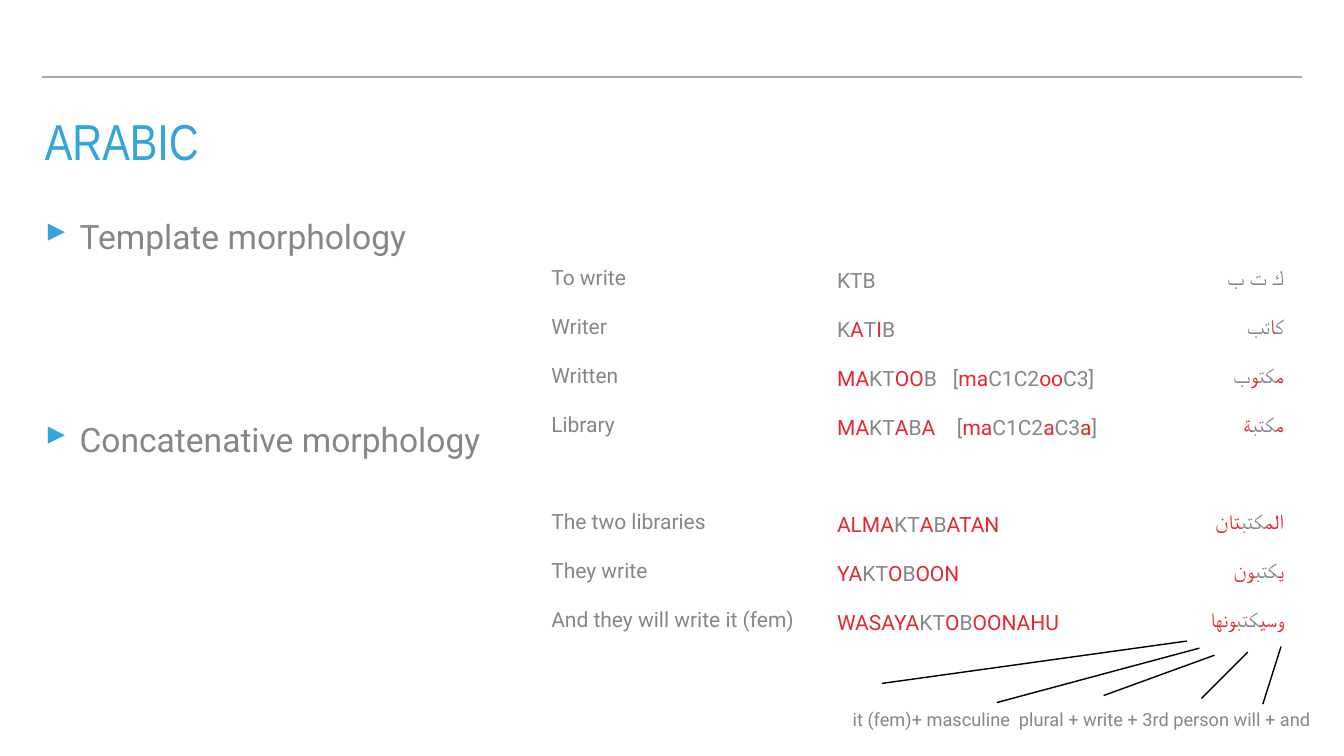
"""Build the slide on Arabic template and concatenative morphology."""
from dataclasses import dataclass

from lxml.etree import SubElement
from pptx import Presentation
from pptx.dml.color import RGBColor as RGB
from pptx.enum.shapes import MSO_CONNECTOR as CONN
from pptx.enum.text import MSO_ANCHOR as ANCHOR, PP_ALIGN as ALIGN
from pptx.oxml.ns import qn
from pptx.util import Inches, Pt


@dataclass(frozen=True)
class Theme:
    blue: str = "34A5DA"
    grey: str = "838787"
    red: str = "E42832"
    rule: str = "A6AAA9"
    black: str = "000000"
    heading: str = "Arial Narrow"
    body: str = "Roboto"
    title_size: float = 72.2
    bullet_size: float = 48
    word_size: float = 30
    gloss_size: float = 26


theme = Theme()
prs = Presentation()
prs.slide_width, prs.slide_height = Inches(26.67), Inches(15)
s = prs.slides.add_slide(prs.slide_layouts[6])


def add_text(box, lines, size, color, font=theme.body, anchor=ANCHOR.MIDDLE, gaps=None):
    tf = s.shapes.add_textbox(*map(Inches, box)).text_frame
    tf.word_wrap = True
    tf.vertical_anchor = anchor
    tf.margin_left = tf.margin_right = tf.margin_top = tf.margin_bottom = Inches(0.06)
    for i, line in enumerate(lines):
        p = tf.paragraphs[0] if i == 0 else tf.add_paragraph()
        if i:
            p.space_before = Pt(gaps[i])
        for j, part in enumerate(line.split("*")):
            if part:
                r = p.add_run()
                r.text = part
                r.font.size, r.font.name = Pt(size), font
                r.font.color.rgb = RGB.from_string(theme.red if j % 2 else color)
    return tf


def add_line(x1, y1, x2, y2, color):
    sp = s.shapes.add_connector(CONN.STRAIGHT, *map(Inches, (x1, y1, x2, y2)))
    sp.line.color.rgb = RGB.from_string(color)
    sp.line.width = Pt(2)
    SubElement(sp._element.spPr, qn("a:effectLst"))


add_line(0.83, 1.53, 25.83, 1.53, theme.rule)

tf = add_text((0.83, 2.36, 25, 1.11), ["ARABIC"], theme.title_size, theme.blue,
              theme.heading, ANCHOR.TOP)
tf.paragraphs[0].line_spacing = 0.8

topics = ["Template morphology", "Concatenative morphology"]
tf = add_text((0.83, 4.22, 10.75, 9.39), topics, theme.bullet_size, theme.grey,
              anchor=ANCHOR.TOP, gaps=[0, 233])
for p in tf.paragraphs:
    pPr = p._p.get_or_add_pPr()
    pPr.set("marL", str(Inches(0.69)))
    pPr.set("indent", str(-Inches(0.69)))
    SubElement(SubElement(pPr, qn("a:buClr")), qn("a:srgbClr"), val=theme.blue)
    SubElement(pPr, qn("a:buSzPct"), val="105000")
    SubElement(pPr, qn("a:buChar"), char="▸")

rows = [
    ("To write", "KTB", "ك ت ب"),
    ("Writer", "K*A*T*I*B", "ك*ا*تب"),
    ("Written", "*MA*KT*OO*B\t[*ma*C1C2*oo*C3]", "*م*كت*و*ب"),
    ("Library", "*MA*KT*A*B*A*\t[*ma*C1C2*a*C3*a*]", "*م*كتب*ة*"),
    ("The two libraries", "*ALMA*KT*A*B*ATAN*", "*الم*كتب*تان*"),
    ("They write", "*YA*KT*O*B*OON*", "*ي*كتب*ون*"),
    ("And they will write it (fem)", "*WASAYA*KT*O*B*OONAHU*", "*وسي*كتب*ونها*"),
]
english, latin, arabic = zip(*rows)
row_gaps = [0, 34, 34, 34, 103, 34, 34]

tf = add_text((23.04, 4.87, 2.5, 8.03), arabic, theme.word_size, theme.grey, gaps=row_gaps)
for p in tf.paragraphs:
    p.alignment = ALIGN.RIGHT
    p._p.get_or_add_pPr().set("rtl", "1")

tf = add_text((16.55, 4.96, 5.57, 7.97), latin, theme.word_size, theme.grey, gaps=row_gaps)
for row, stop in ((2, 2.3), (3, 2.38)):
    tabs = SubElement(tf.paragraphs[row]._p.get_or_add_pPr(), qn("a:tabLst"))
    SubElement(tabs, qn("a:tab"), pos=str(Inches(stop)), algn="l")

add_text((10.88, 4.9, 5.13, 7.97), english, theme.word_size, theme.grey, gaps=row_gaps)

gloss = "it (fem)+ masculine  plural + write + 3rd person will + and"
add_text((16.86, 13.97, 9.7, 0.61), [gloss], theme.gloss_size, theme.grey)

pointers = [
    (17.5, 13.56, 23.55, 12.72),
    (19.78, 13.94, 23.8, 12.86),
    (21.9, 13.8, 24.1, 13),
    (23.84, 13.86, 24.76, 12.94),
    (25.06, 13.97, 25.42, 12.83),
]
for pointer in pointers:
    add_line(*pointer, theme.black)

prs.save("out.pptx")
